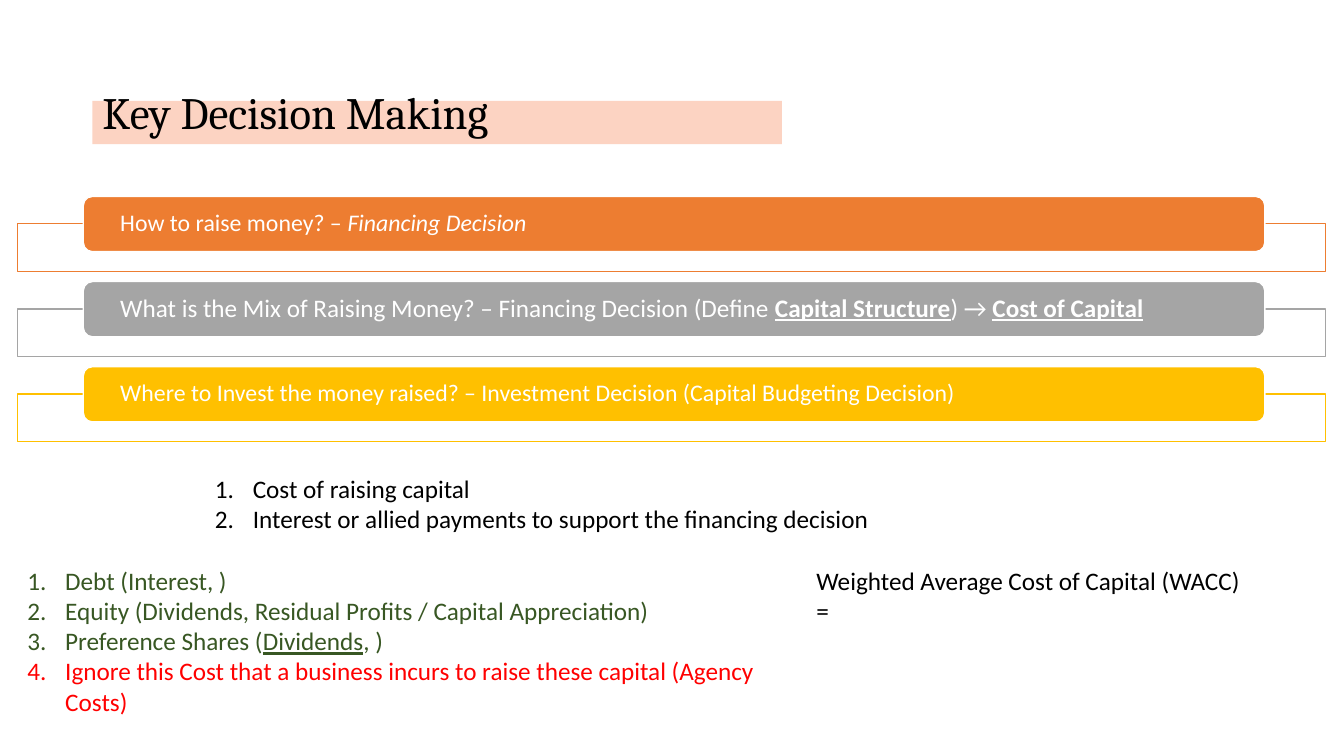
from dataclasses import dataclass

from lxml.etree import SubElement
from pptx import Presentation
from pptx.dml.color import RGBColor
from pptx.enum.shapes import MSO_SHAPE
from pptx.enum.text import MSO_ANCHOR, PP_ALIGN
from pptx.oxml.ns import qn
from pptx.util import Pt


@dataclass(frozen=True)
class Theme:
    head: str = "Cambria"
    body: str = "Calibri"
    title: float = 32
    text: float = 18
    small: float = 17
    black: str = "000000"
    white: str = "FFFFFF"
    peach: str = "FCD3C2"
    orange: str = "ED7D31"
    grey: str = "A5A5A5"
    gold: str = "FFC000"
    green: str = "385723"
    red: str = "FF0000"


THEME = Theme()

# Each run is a text and its style letters: b bold, i italic, u underline.
DECISIONS = [
    (THEME.orange, THEME.small,
     [("How to raise money? – ", ""), ("Financing Decision", "i")]),
    (THEME.grey, THEME.text,
     [("What is the Mix of Raising Money? – Financing Decision (Define ", ""),
      ("Capital Structure", "bu"), (") → ", ""), ("Cost of Capital", "bu")]),
    (THEME.gold, THEME.small,
     [("Where to Invest the money raised? – Investment Decision "
       "(Capital Budgeting Decision)", "")]),
]
COSTS = [
    (THEME.black, [("Cost of raising capital", "")]),
    (THEME.black, [("Interest or allied payments to support the financing decision", "")]),
]
SOURCES = [
    (THEME.green, [("Debt (Interest, )", "")]),
    (THEME.green, [("Equity (Dividends, Residual Profits / Capital Appreciation)", "")]),
    (THEME.green, [("Preference Shares (", ""), ("Dividends", "u"), (", )", "")]),
    (THEME.red, [("Ignore this Cost that a business incurs to raise these capital "
                  "(Agency Costs)", "")]),
]
WACC = [(THEME.black, [("Weighted Average Cost of Capital (WACC) =", "")])]


def paint(font, color, size, name=THEME.body):
    font.name = name
    font.size = Pt(size)
    font.color.rgb = RGBColor.from_string(color)


def write(para, runs, color, size):
    for text, style in runs:
        run = para.add_run()
        run.text = text
        paint(run.font, color, size)
        run.font.bold = "b" in style
        run.font.italic = "i" in style
        run.font.underline = "u" in style


def block(slide, kind, box, fill, line=None):
    shape = slide.shapes.add_shape(kind, *map(Pt, box))
    shape.shadow.inherit = False
    shape.fill.solid()
    shape.fill.fore_color.rgb = RGBColor.from_string(fill)
    if line:
        shape.line.color.rgb = RGBColor.from_string(line)
        shape.line.width = Pt(1)
    else:
        shape.line.fill.background()
    return shape


def header(slide, box, text):
    """Place the title over a tinted band that starts at the same left edge."""
    left, top, _, _ = box
    title = slide.shapes.title
    title.left, title.top, title.width, title.height = map(Pt, box)
    band = block(slide, MSO_SHAPE.RECTANGLE, (left, top + 18.7, 492.5, 31), THEME.peach)
    title.element.addprevious(band.element)
    frame = title.text_frame
    frame.text = text
    frame.vertical_anchor = MSO_ANCHOR.MIDDLE
    para = frame.paragraphs[0]
    para.alignment = PP_ALIGN.LEFT
    para.line_spacing = 0.9
    paint(para.runs[0].font, THEME.black, THEME.title, THEME.head)


def decision(slide, box, color, size, runs):
    """Draw an outlined frame with a rounded bar overlapping its top edge."""
    left, top, width, height = box
    block(slide, MSO_SHAPE.RECTANGLE,
          (left, top + 19.5, width, height - 19.5), THEME.white, color)
    bar = block(slide, MSO_SHAPE.ROUNDED_RECTANGLE,
                (left + 47, top, 844, 39.5), color, THEME.white)
    frame = bar.text_frame
    frame.word_wrap = True
    frame.vertical_anchor = MSO_ANCHOR.MIDDLE
    frame.margin_left = frame.margin_right = Pt(24.5)
    frame.margin_top = frame.margin_bottom = 0
    para = frame.paragraphs[0]
    para.alignment = PP_ALIGN.LEFT
    para.line_spacing = 0.9
    write(para, runs, THEME.white, size)


def stack(slide, box, rows):
    left, top, width, height = box
    pitch = height / len(rows)
    for i, row in enumerate(rows):
        decision(slide, (left, top + i * pitch, width, 53.5), *row)


def number(para):
    props = para._p.get_or_add_pPr()
    props.set("marL", str(Pt(27)))
    props.set("indent", str(-Pt(27)))
    SubElement(props, qn("a:buFont"), typeface="+mj-lt")
    SubElement(props, qn("a:buAutoNum"), type="arabicPeriod")


def note(slide, box, items, numbered=True):
    frame = slide.shapes.add_textbox(*map(Pt, box)).text_frame
    frame.word_wrap = True
    for i, (color, runs) in enumerate(items):
        para = frame.add_paragraph() if i else frame.paragraphs[0]
        if numbered:
            number(para)
        write(para, runs, color, THEME.text)


def main():
    deck = Presentation()
    deck.slide_width, deck.slide_height = Pt(960), Pt(540)
    slide = deck.slides.add_slide(deck.slide_layouts.get_by_name("Title Only"))
    header(slide, (66, 53.3, 828, 58.3), "Key Decision Making")
    stack(slide, (12.5, 140.3, 934.5, 182.4), DECISIONS)
    note(slide, (12.5, 400, 574.5, 117), SOURCES)
    note(slide, (146.5, 334.5, 633.5, 51), COSTS)
    note(slide, (576, 400, 318, 51), WACC, numbered=False)
    deck.save("out.pptx")


if __name__ == "__main__":
    main()
